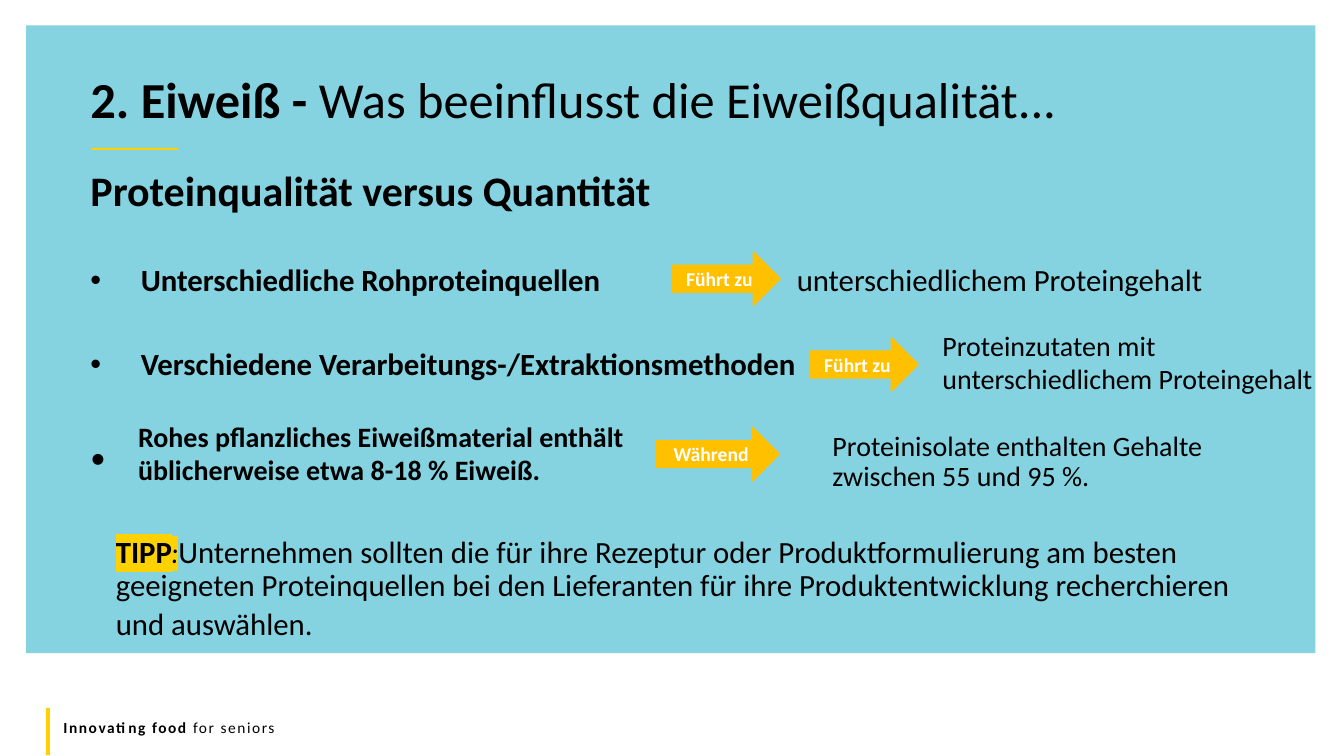
from lxml.etree import SubElement
from pptx import Presentation
from pptx.dml.color import RGBColor
from pptx.enum.shapes import MSO_SHAPE
from pptx.enum.text import MSO_ANCHOR, PP_ALIGN
from pptx.oxml.ns import qn
from pptx.util import Cm, Pt

BLACK = RGBColor(0x00, 0x00, 0x00)
WHITE = RGBColor(0xFF, 0xFF, 0xFF)
TEAL = RGBColor(0x85, 0xD2, 0xE1)
YELLOW = RGBColor(0xFF, 0xD1, 0x00)
AMBER = RGBColor(0xFF, 0xC0, 0x00)
HIGHLIGHT = "FED100"
FONT = "Calibri"

# Places are left, top, width, height in centimetres.
BLOCKS = [
    ((0.66, 0.64, 32.49, 15.82), TEAL),
    ((2.29, 3.73, 2.21, 0.05), YELLOW),
    ((1.16, 17.84, 0.1, 1.19), YELLOW),
]

# Single lines: left, vertical centre, width, size, bulleted, runs of (text, bold).
LINES = [
    (2.03, 2.47, 30.02, 36, False,
     [("2. Eiweiß - ", True), ("Was beeinflusst die Eiweißqualität...", False)]),
    (2.03, 4.78, 30.02, 30, False, [("Proteinqualität versus Quantität", True)]),
    (2.03, 7.04, 14.5, 22, True, [("Unterschiedliche Rohproteinquellen", True)]),
    (19.83, 7.04, 12.5, 22, False, [("unterschiedlichem Proteingehalt", False)]),
    (2.03, 9.16, 18.8, 22, True,
     [("Verschiedene Verarbeitungs-/Extraktionsmethoden", True)]),
    (2.03, 11.5, 1.2, 22, False, [("•", False)]),
]
LINE_HEIGHT = 1.6

# Two-line texts: place, bold, line spacing, text.
NOTES = [
    ((23.5, 8.15, 10.95, 1.96), False, 1.0,
     "Proteinzutaten mit unterschiedlichem Proteingehalt"),
    ((3.23, 10.44, 13.49, 1.96), True, 1.0,
     "Rohes pflanzliches Eiweißmaterial enthält üblicherweise etwa 8-18 % Eiweiß."),
    ((20.73, 10.77, 11.18, 1.8), False, 0.9,
     "Proteinisolate enthalten Gehalte zwischen 55 und 95 %."),
]

ARROWS = [
    ((16.94, 6.35, 2.72, 1.35), "Führt zu"),
    ((20.42, 8.51, 2.72, 1.35), "Führt zu"),
    ((16.54, 10.77, 3.1, 1.35), "Während"),
]

TIP_PLACE = (2.67, 13.41, 29.38, 3.1)
# Text, bold, size, font, highlighted.
TIP_RUNS = [
    ("TIPP", True, 22, FONT, True),
    (":", True, 22, "Comic Neue", True),
    ("Unternehmen sollten die für ihre Rezeptur oder Produktformulierung am besten "
     "geeigneten Proteinquellen bei den Lieferanten für ihre Produktentwicklung "
     "recherchieren und auswählen.", False, 22, FONT, False),
    (" ", False, 26, FONT, False),
]

FOOTER_PLACE = (1.35, 17.96, 30.48, 0.74)
FOOTER_RUNS = [("Innovating food ", True), ("for seniors", False)]


def add_block(slide, place, color, kind=MSO_SHAPE.RECTANGLE):
    shape = slide.shapes.add_shape(kind, *map(Cm, place))
    shape.shadow.inherit = False
    shape.fill.solid()
    shape.fill.fore_color.rgb = color
    shape.line.fill.background()
    return shape


def add_text_frame(slide, place, anchor=MSO_ANCHOR.TOP):
    frame = slide.shapes.add_textbox(*map(Cm, place)).text_frame
    frame.word_wrap = True
    frame.vertical_anchor = anchor
    return frame


def style(font, size, color=BLACK, name=FONT):
    font.size = Pt(size)
    font.color.rgb = color
    font.name = name


def add_bullet(paragraph):
    properties = paragraph._p.get_or_add_pPr()
    properties.set("marL", str(Cm(1.27)))
    properties.set("indent", str(-Cm(1.27)))
    SubElement(properties, qn("a:buFont")).set("typeface", "Arial")
    SubElement(properties, qn("a:buChar")).set("char", "•")


def add_runs(paragraph, runs):
    for text, bold in runs:
        run = paragraph.add_run()
        run.text = text
        run.font.bold = bold


def add_highlight(run):
    """Mark a run whose colour is set; the highlight follows the fill."""
    properties = run._r.get_or_add_rPr()
    highlight = SubElement(properties, qn("a:highlight"))
    SubElement(highlight, qn("a:srgbClr")).set("val", HIGHLIGHT)
    properties.find(qn("a:solidFill")).addnext(highlight)


def add_line(slide, left, centre, width, size, bulleted, runs):
    place = (left, centre - LINE_HEIGHT / 2, width, LINE_HEIGHT)
    paragraph = add_text_frame(slide, place, MSO_ANCHOR.MIDDLE).paragraphs[0]
    if bulleted:
        add_bullet(paragraph)
    style(paragraph.font, size)
    add_runs(paragraph, runs)


def add_note(slide, place, bold, spacing, text):
    paragraph = add_text_frame(slide, place).paragraphs[0]
    paragraph.text = text
    paragraph.line_spacing = spacing
    style(paragraph.font, 20)
    paragraph.font.bold = bold


def add_arrow(slide, place, label):
    arrow = add_block(slide, place, AMBER, MSO_SHAPE.RIGHT_ARROW)
    arrow.line.color.rgb = AMBER
    arrow.line.width = Pt(1)
    arrow.text_frame.vertical_anchor = MSO_ANCHOR.MIDDLE
    paragraph = arrow.text_frame.paragraphs[0]
    paragraph.text = label
    paragraph.alignment = PP_ALIGN.CENTER
    style(paragraph.font, 14, WHITE)
    paragraph.font.bold = True


def add_tip(slide):
    paragraph = add_text_frame(slide, TIP_PLACE).paragraphs[0]
    paragraph.line_spacing = 0.9
    for text, bold, size, name, highlighted in TIP_RUNS:
        run = paragraph.add_run()
        run.text = text
        style(run.font, size, name=name)
        run.font.bold = bold
        if highlighted:
            add_highlight(run)


def add_footer(slide):
    paragraph = add_text_frame(slide, FOOTER_PLACE).paragraphs[0]
    style(paragraph.font, 11)
    add_runs(paragraph, FOOTER_RUNS)
    for run in paragraph.runs:
        run._r.get_or_add_rPr().set("spc", "110")


def main():
    presentation = Presentation()
    presentation.slide_width = Cm(33.87)
    presentation.slide_height = Cm(19.05)
    slide = presentation.slides.add_slide(presentation.slide_layouts[6])
    for block in BLOCKS:
        add_block(slide, *block)
    for line in LINES:
        add_line(slide, *line)
    for arrow in ARROWS:
        add_arrow(slide, *arrow)
    for note in NOTES:
        add_note(slide, *note)
    add_tip(slide)
    add_footer(slide)
    presentation.save("out.pptx")


if __name__ == "__main__":
    main()
